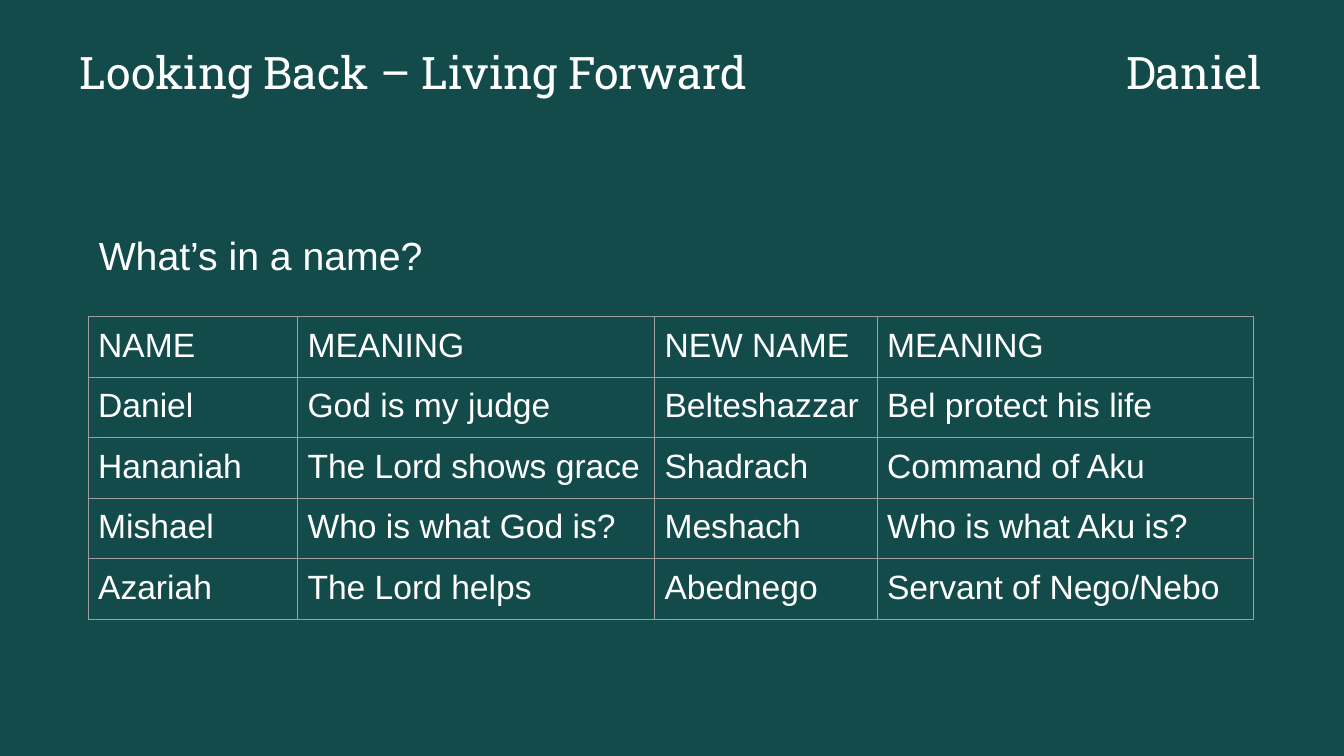
"""Build the Daniel names slide."""
import pptx
import pptx.dml.color
import pptx.enum.shapes
import pptx.enum.text
import pptx.oxml
import pptx.oxml.ns
import pptx.util

Pt = pptx.util.Pt
ALIGN = pptx.enum.text.PP_ALIGN

COLORS = {"background": "0B2827", "panel": "134B4B", "text": "FFFFFF", "border": "9E9E9E"}
SLIDE_SIZE = (960, 540)

HEADING = {"name": "Roboto Slab", "size": Pt(32)}
QUESTION = {"name": "Arial", "size": Pt(28)}
CELL = {"name": "Arial", "size": Pt(24)}

TEXTS = [
    ("Looking Back – Living Forward", (56.9, 31.7, 481, 49), HEADING, {"alignment": ALIGN.LEFT}, 0),
    ("What’s in a name?", (70.6, 156.2, 832.3, 335.5), QUESTION,
     {"alignment": ALIGN.LEFT, "line_spacing": 1.2}, 2.5),
    ("Daniel", (753.8, 31.7, 147.6, 49), HEADING, {"alignment": ALIGN.RIGHT}, 0),
]

NAMES = [
    ("NAME", "MEANING", "NEW NAME", "MEANING"),
    ("Daniel", "God is my judge", "Belteshazzar", "Bel protect his life"),
    ("Hananiah", "The Lord shows grace", "Shadrach", "Command of Aku"),
    ("Mishael", "Who is what God is?", "Meshach", "Who is what Aku is?"),
    ("Azariah", "The Lord helps", "Abednego", "Servant of Nego/Nebo"),
]
TABLE_ORIGIN = (62.9, 226.1)
COLUMN_WIDTHS = (149.6, 255, 159, 268.6)
ROW_HEIGHT = 41.1
CELL_MARGIN = 7.2
BORDER_WIDTH = 0.75


def rgb(name):
    return pptx.dml.color.RGBColor.from_string(COLORS[name])


def apply(target, values):
    for name, value in values.items():
        setattr(target, name, value)


def margins(size):
    return {f"margin_{side}": Pt(size) for side in ("left", "top", "right", "bottom")}


def write(paragraph, text, font):
    run = paragraph.add_run()
    run.text = text
    apply(run.font, font)
    run.font.color.rgb = rgb("text")


def add_panel(slide):
    slide.background.fill.solid()
    slide.background.fill.fore_color.rgb = rgb("background")
    panel = slide.shapes.add_shape(
        pptx.enum.shapes.MSO_SHAPE.RECTANGLE, 0, 0, *map(Pt, SLIDE_SIZE))
    panel.shadow.inherit = False
    panel.fill.solid()
    panel.fill.fore_color.rgb = rgb("panel")
    panel.line.fill.background()


def add_text(slide, text, box, font, layout, top_margin):
    frame = slide.shapes.add_textbox(*map(Pt, box)).text_frame
    apply(frame, margins(0) | {"margin_top": Pt(top_margin), "word_wrap": True})
    paragraph = frame.paragraphs[0]
    apply(paragraph, layout)
    write(paragraph, text, font)


def add_borders(cell):
    properties = cell._tc.get_or_add_tcPr()
    for index, side in enumerate(("lnL", "lnR", "lnT", "lnB")):
        properties.insert(index, pptx.oxml.parse_xml(
            f'<a:{side} {pptx.oxml.ns.nsdecls("a")} w="{Pt(BORDER_WIDTH)}">'
            f'<a:solidFill><a:srgbClr val="{COLORS["border"]}"/></a:solidFill></a:{side}>'))


def add_names_table(slide):
    size = (sum(COLUMN_WIDTHS), ROW_HEIGHT * len(NAMES))
    table = slide.shapes.add_table(
        len(NAMES), len(COLUMN_WIDTHS), *map(Pt, TABLE_ORIGIN + size)).table
    apply(table, {"first_row": False, "horz_banding": False})
    for column, width in zip(table.columns, COLUMN_WIDTHS):
        column.width = Pt(width)
    for row, texts in zip(table.rows, NAMES):
        row.height = Pt(ROW_HEIGHT)
        for cell, text in zip(row.cells, texts):
            apply(cell, margins(CELL_MARGIN))
            cell.fill.background()
            add_borders(cell)
            write(cell.text_frame.paragraphs[0], text, CELL)


def main():
    presentation = pptx.Presentation()
    apply(presentation, dict(zip(("slide_width", "slide_height"), map(Pt, SLIDE_SIZE))))
    slide = presentation.slides.add_slide(presentation.slide_layouts[6])
    add_panel(slide)
    for text in TEXTS:
        add_text(slide, *text)
    add_names_table(slide)
    presentation.save("out.pptx")


if __name__ == "__main__":
    main()
